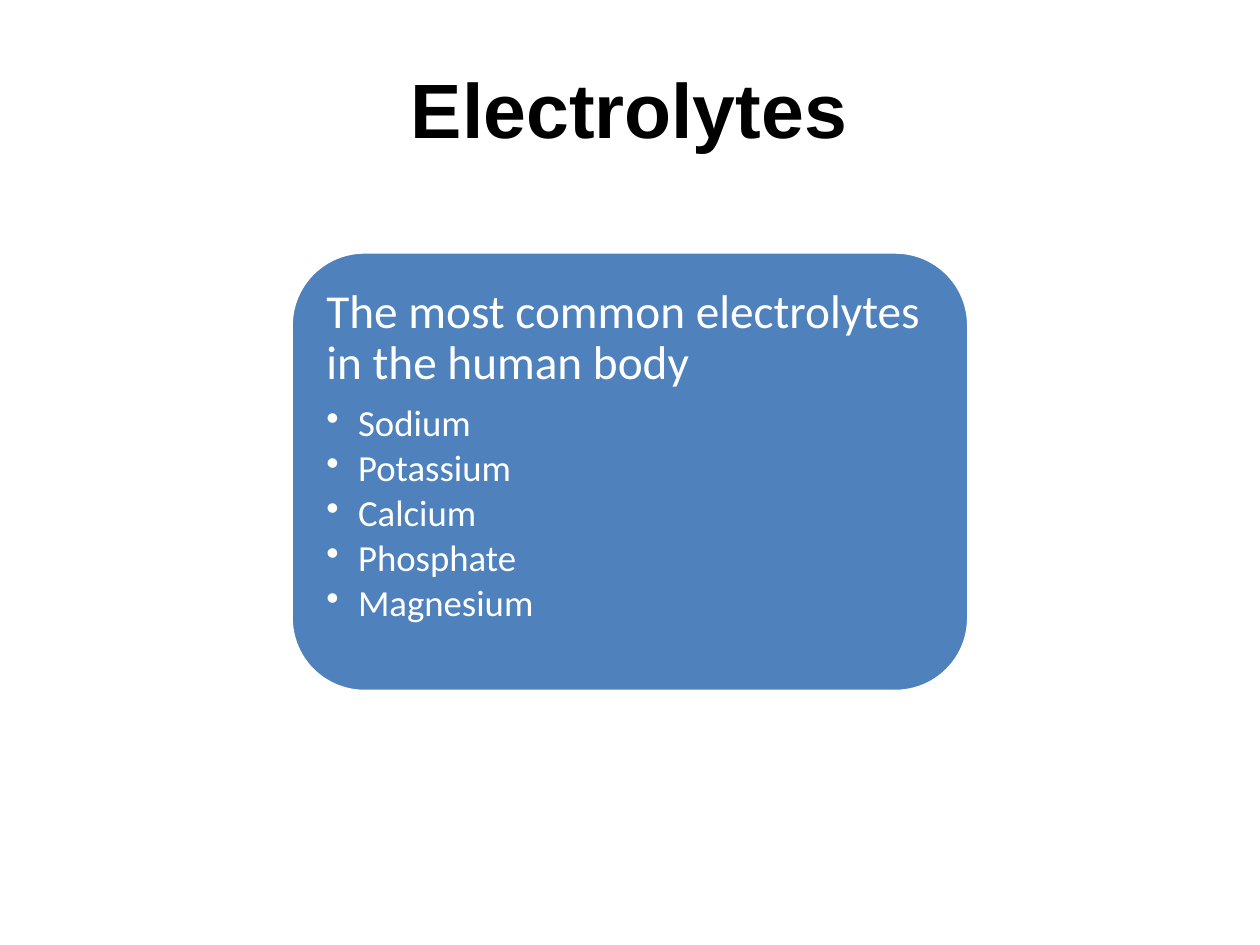
from dataclasses import dataclass
from lxml.etree import SubElement
from pptx import Presentation
from pptx.dml.color import RGBColor as Rgb
from pptx.enum.shapes import MSO_SHAPE as Form
from pptx.enum.text import MSO_ANCHOR as Anchor, MSO_AUTO_SIZE as Fit, PP_ALIGN as Align
from pptx.oxml.ns import qn
from pptx.util import Cm, Pt


@dataclass(frozen=True)
class Theme:
    """Colours, fonts and type sizes."""
    ink: Rgb = Rgb(0, 0, 0)
    pale: Rgb = Rgb(255, 255, 255)
    blue: Rgb = Rgb(0x4F, 0x81, 0xBD)
    head: str = "Arial"
    body: str = "Calibri"
    big: int = 44
    lead: int = 27
    item: int = 21


class Deck:
    """Style and current slide."""

    def __init__(self, theme):
        self.theme = theme
        self.file = Presentation()
        self.file.slide_width, self.file.slide_height = Cm(25.4), Cm(19.05)
        self.slide = self.file.slides.add_slide(self.file.slide_layouts[5])

    def run(self, para, text, font, size, color, bold=False):
        """Add one styled run."""
        run = para.add_run()
        run.text = text
        run.font.name, run.font.size, run.font.bold = font, Pt(size), bold
        run.font.color.rgb = color

    def inset(self, frame, gap):
        """Set equal margins and wrapping."""
        frame.margin_left = frame.margin_right = Cm(gap)
        frame.margin_top = frame.margin_bottom = Cm(gap)
        frame.word_wrap = True

    def title(self, text, x, y, w, h):
        """Place and fill the title."""
        box = self.slide.shapes.title
        box.left, box.top, box.width, box.height = map(Cm, (x, y, w, h))
        frame = box.text_frame
        self.inset(frame, 0)
        frame.vertical_anchor = Anchor.MIDDLE
        frame.auto_size = Fit.SHAPE_TO_FIT_TEXT
        para = frame.paragraphs[0]
        para.alignment = Align.CENTER
        self.run(para, text, self.theme.head, self.theme.big, self.theme.ink, True)

    def panel(self, x, y, w, h):
        """Draw the rounded panel."""
        card = self.slide.shapes.add_shape(Form.ROUNDED_RECTANGLE, *map(Cm, (x, y, w, h)))
        card.shadow.inherit = False
        card.fill.solid()
        card.fill.fore_color.rgb = self.theme.blue
        card.line.color.rgb = self.theme.pale
        card.line.width = Pt(2)

    def bullet(self, para):
        """Give a paragraph a hanging bullet."""
        para.level = 1
        props = para._p.get_or_add_pPr()
        props.set("marL", str(Cm(0.64)))
        props.set("indent", str(-Cm(0.64)))
        SubElement(props, qn("a:buChar")).set("char", "•")

    def notes(self, lead, items, x, y, w, h):
        """Write a lead line and its bullets."""
        frame = self.slide.shapes.add_textbox(*map(Cm, (x, y, w, h))).text_frame
        self.inset(frame, 0.28)
        for rank, text in enumerate([lead, *items]):
            para = frame.add_paragraph() if rank else frame.paragraphs[0]
            size = self.theme.item if rank else self.theme.lead
            para.alignment = Align.LEFT
            para.line_spacing = 0.9
            para.space_after = Pt(round(size * (0.15 if rank else 0.35)))
            if rank:
                self.bullet(para)
            self.run(para, text, self.theme.body, size, self.theme.pale)


def main():
    """Build and save the slide."""
    deck = Deck(Theme())
    deck.title("Electrolytes", 1.75, 1.24, 21.87, 1.88)
    deck.panel(5.87, 5.08, 13.66, 8.86)
    deck.notes("The most common electrolytes in the human body",
               ["Sodium", "Potassium", "Calcium", "Phosphate", "Magnesium"],
               6.3, 5.51, 12.8, 8)
    deck.file.save("out.pptx")


if __name__ == "__main__":
    main()
